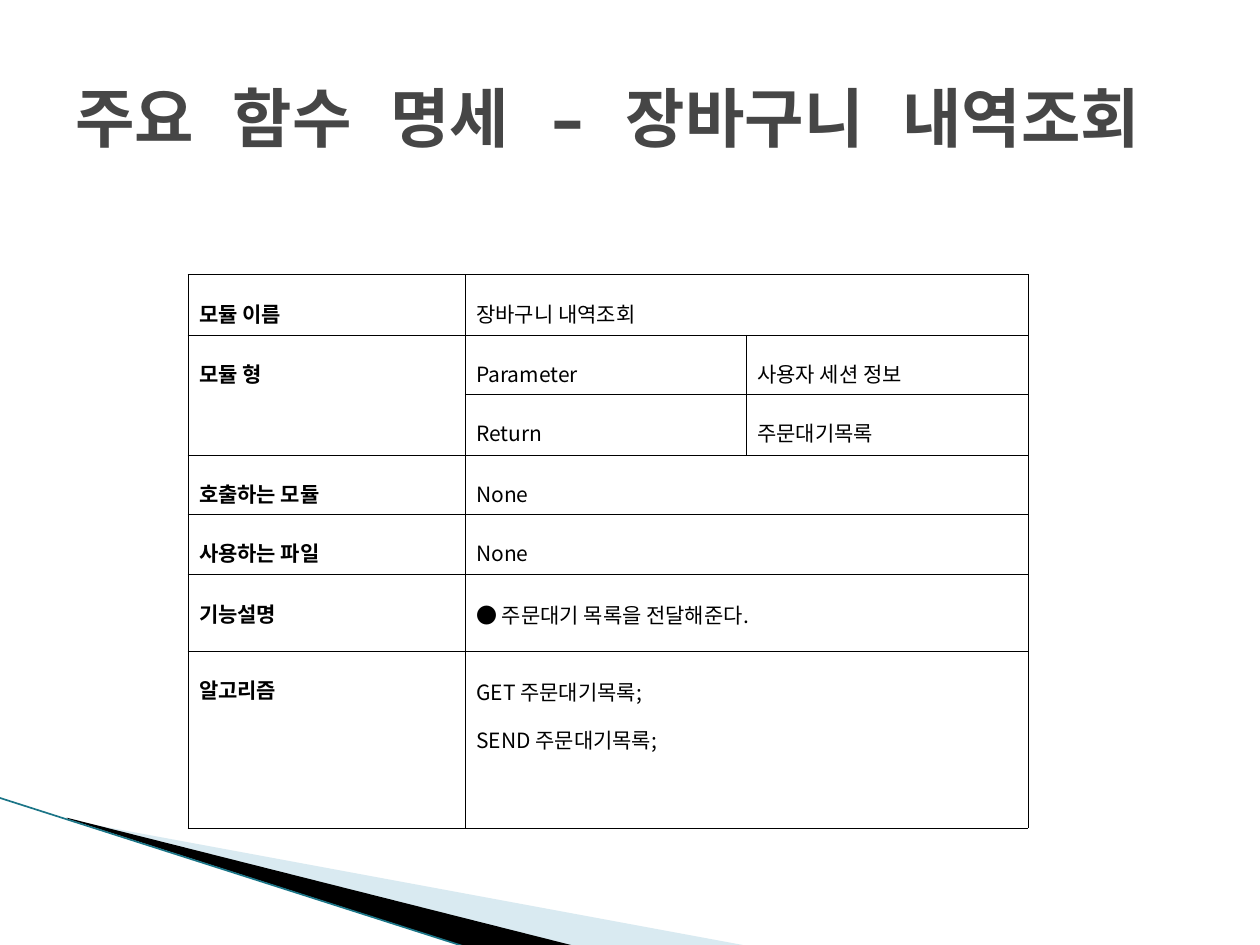
from lxml.etree import SubElement
from pptx import Presentation
from pptx.dml.color import RGBColor
from pptx.enum.shapes import MSO_CONNECTOR
from pptx.enum.text import MSO_ANCHOR, PP_ALIGN
from pptx.oxml.ns import qn
from pptx.util import Inches, Pt

TITLE = "주요 함수 명세 – 장바구니 내역조회"
ROWS = [
    (0.48, "모듈 이름", "장바구니 내역조회"),
    (0.47, "모듈 형", "Parameter", "사용자 세션 정보"),
    (0.48, "", "Return", "주문대기목록"),
    (0.47, "호출하는 모듈", "None"),
    (0.48, "사용하는 파일", "None"),
    (0.61, "기능설명", "● 주문대기 목록을 전달해준다."),
    (1.4, "알고리즘", "GET 주문대기목록;\nSEND 주문대기목록;"),
]
COLS = (2.2, 2.23, 2.24)
WIDE, HIGH = 10, 7.5
THEME = {
    "ink": "000000", "head": "464646", "pale": "A0CBDC", "edge": "1B7587",
    "title": 36.9, "body": 12, "mono": "Noto Sans Mono", "sans": "Noto Sans CJK KR",
}
WEDGES = [
    ([(0.55, 6.51), (5.95, 7.51), (4.56, 7.51), (0.55, 6.5)], "pale", 40),
    ([(0.53, 6.49), (4.57, 7.51), (3.72, 7.52), (0.54, 6.5)], "ink", 100),
]
EDGE = (-0.01, 6.33, 3.71, 7.52)


def tint(name):
    return RGBColor.from_string(THEME[name])


def apply(item, values):
    for key, value in values.items():
        setattr(item, key, value)


def write(para, text, face, size, color, bold):
    run = para.add_run()
    run.text = text
    apply(run.font, {"name": THEME[face], "size": Pt(THEME[size]), "bold": bold})
    run.font.color.rgb = tint(color)
    SubElement(run.font._element, qn("a:ea"), typeface=THEME[face])


def wedge(slide, points, color, alpha):
    first, *rest = [(Inches(x), Inches(y)) for x, y in points]
    pen = slide.shapes.build_freeform(*first)
    pen.add_line_segments(rest, close=True)
    shape = pen.convert_to_shape()
    shape.shadow.inherit = False
    shape.fill.solid()
    shape.fill.fore_color.rgb = tint(color)
    shape.line.fill.background()
    if alpha < 100:
        fill = shape._element.spPr.find(qn("a:solidFill"))
        SubElement(fill[0], qn("a:alpha"), val=str(alpha * 1000))


def border(cell):
    props = cell._tc.get_or_add_tcPr()
    for side in "LRTB":
        line = SubElement(props, qn(f"a:ln{side}"), w=str(Pt(0.25)))
        fill = SubElement(line, qn("a:solidFill"))
        SubElement(fill, qn("a:srgbClr"), val=THEME["ink"])
    cell.fill.background()


def fill_cell(cell, text, bold, inset):
    apply(cell, {
        "margin_left": Inches(0.09), "margin_right": Inches(0.09),
        "margin_top": Inches(inset), "margin_bottom": Inches(inset),
    })
    for i, line in enumerate(text.split("\n")):
        frame = cell.text_frame
        para = frame.add_paragraph() if i else frame.paragraphs[0]
        apply(para, {"alignment": PP_ALIGN.JUSTIFY, "line_spacing": 1.6})
        write(para, line, "sans", "body", "ink", bold)


def add_grid(slide):
    high = sum(row[0] for row in ROWS)
    area = [Inches(n) for n in (1.49, 2.18, sum(COLS), high)]
    table = slide.shapes.add_table(len(ROWS), len(COLS), *area).table
    apply(table, {"first_row": False, "horz_banding": False})
    for col, width in zip(table.columns, COLS):
        col.width = Inches(width)
    for r, (tall, *texts) in enumerate(ROWS):
        table.rows[r].height = Inches(tall)
        for c in range(len(COLS)):
            border(table.cell(r, c))
        if len(texts) < len(COLS):
            table.cell(r, 1).merge(table.cell(r, 2))
        if not texts[0]:
            table.cell(r - 1, 0).merge(table.cell(r, 0))
        for c, text in enumerate(texts):
            if text:
                inset = 0.05 if c and tall > 0.5 else 0.04
                fill_cell(table.cell(r, c), text, c == 0, inset)


def main():
    deck = Presentation()
    apply(deck, {"slide_width": Inches(WIDE), "slide_height": Inches(HIGH)})
    slide = deck.slides.add_slide(deck.slide_layouts[6])
    for item in WEDGES:
        wedge(slide, *item)
    ends = [Inches(n) for n in EDGE]
    edge = slide.shapes.add_connector(MSO_CONNECTOR.STRAIGHT, *ends)
    edge.line.color.rgb = tint("edge")
    edge.line.width = Pt(0.95)
    SubElement(edge._element.spPr, qn("a:effectLst"))
    area = [Inches(n) for n in (WIDE * 0.05, HIGH * 0.04, WIDE * 0.9, 1.25)]
    frame = slide.shapes.add_textbox(*area).text_frame
    apply(frame, {"word_wrap": True, "vertical_anchor": MSO_ANCHOR.MIDDLE})
    write(frame.paragraphs[0], TITLE, "mono", "title", "head", True)
    add_grid(slide)
    deck.save("out.pptx")


if __name__ == "__main__":
    main()
